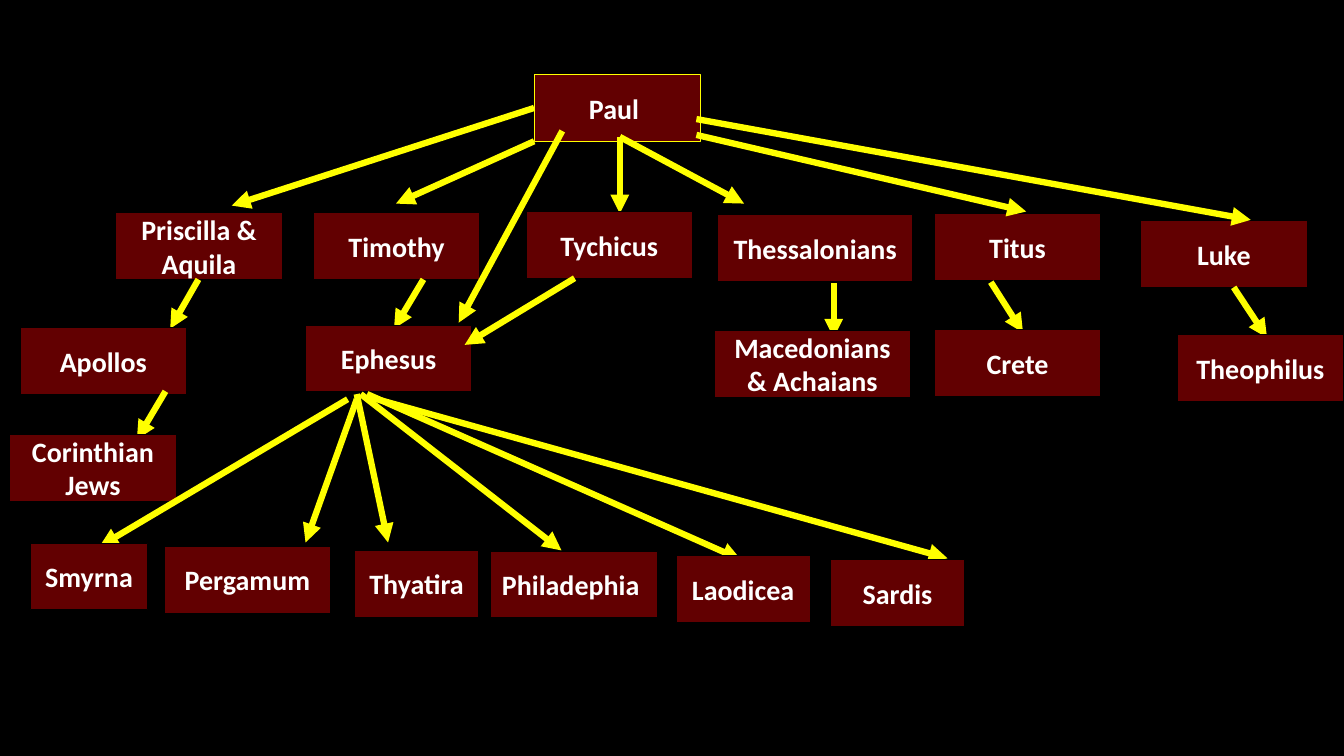
import pptx
import pptx.dml.color
import pptx.enum.shapes
import pptx.enum.text
import pptx.oxml
import pptx.oxml.ns
import pptx.util
from pptx.util import Cm

COLORS = {"background": "000000", "box": "620001", "edge": "000000",
          "arrow": "FFFF00", "text": "FFFFFF"}
BOX_W, BOX_H, WIDE_W = 4.19, 1.68, 4.93


def rgb(name):
    return pptx.dml.color.RGBColor.from_string(COLORS[name])


class Chart:
    """Style and current slide of the discipleship tree."""

    def __init__(self, prs):
        self.font, self.size = "Calibri", pptx.util.Pt(20)
        self.s = prs.slides.add_slide(prs.slide_layouts[6])
        fill = self.s.background.fill
        fill.solid()
        fill.fore_color.rgb = rgb("background")

    def box(self, text, x, y, w=BOX_W, edge="edge"):
        sp = self.s.shapes.add_shape(
            pptx.enum.shapes.MSO_SHAPE.RECTANGLE, Cm(x), Cm(y), Cm(w), Cm(BOX_H))
        sp.shadow.inherit = False
        sp.fill.solid()
        sp.fill.fore_color.rgb = rgb("box")
        sp.line.color.rgb = rgb(edge)
        sp.line.width = pptx.util.Pt(0.75)
        tf = sp.text_frame
        tf.word_wrap = True
        tf.vertical_anchor = pptx.enum.text.MSO_ANCHOR.MIDDLE
        p = tf.paragraphs[0]
        p.text = text
        p.alignment = pptx.enum.text.PP_ALIGN.CENTER
        p.font.name, p.font.size, p.font.bold = self.font, self.size, True
        p.font.color.rgb = rgb("text")

    def arrow(self, x1, y1, x2, y2):
        c = self.s.shapes.add_connector(
            pptx.enum.shapes.MSO_CONNECTOR.STRAIGHT, Cm(x1), Cm(y1), Cm(x2), Cm(y2))
        c.line.color.rgb = rgb("arrow")
        c.line.width = pptx.util.Pt(4.5)
        head = pptx.oxml.parse_xml(
            f'<a:tailEnd {pptx.oxml.ns.nsdecls("a")} type="triangle"/>')
        c.line._get_or_add_ln().append(head)
        c._element.spPr.append(pptx.oxml.parse_xml(
            f'<a:effectLst {pptx.oxml.ns.nsdecls("a")}/>'))

    def boxes(self, rows):
        for row in rows:
            self.box(*row)

    def arrows(self, rows):
        for row in rows:
            self.arrow(*row)


COWORKERS = [
    ("Luke", 28.75, 5.56), ("Titus", 23.55, 5.38), ("Timothy", 7.9, 5.36),
    ("Priscilla & Aquila", 2.92, 5.36), ("Thessalonians", 18.08, 5.41, WIDE_W),
]
FROM_PAUL = [
    (13.46, 2.72, 5.84, 5.18), (13.46, 3.56, 9.98, 5.13),
    (15.62, 3.45, 15.62, 5.38), (15.62, 3.45, 18.75, 5.13),
    (17.55, 3.4, 25.86, 5.33), (17.55, 3.0, 31.52, 5.54),
]
FROM_COWORKERS = [
    (5.0, 7.04, 4.29, 8.28), (10.67, 7.04, 9.93, 8.28),
    (21.01, 7.14, 21.01, 8.51), (24.97, 7.11, 25.78, 8.38),
    (31.09, 7.24, 31.93, 8.51),
]
REACHED = [
    ("Tychicus", 13.26, 5.33), ("Apollos", 0.51, 8.26), ("Ephesus", 7.7, 8.2),
    ("Macedonians & Achaians", 18.01, 8.33, WIDE_W),
    ("Crete", 23.55, 8.31), ("Theophilus", 29.67, 8.43),
]
TO_EPHESUS = [(14.17, 3.3, 11.56, 8.13), (14.48, 7.01, 11.71, 8.69)]
FROM_EPHESUS = [
    (8.76, 10.06, 2.51, 13.77), (8.99, 10.06, 7.7, 13.67),
    (8.99, 9.93, 9.78, 13.67), (9.09, 9.93, 14.15, 13.87),
    (9.25, 9.93, 18.67, 14.1), (9.32, 10.01, 23.88, 14.07),
]
CHURCHES = [
    ("Smyrna", 0.76, 13.69, 2.97), ("Pergamum", 4.14, 13.77),
    ("Thyatira", 8.94, 13.87, 3.12), ("Philadephia ", 12.37, 13.89),
    ("Laodicea", 17.04, 14.0, 3.38), ("Sardis", 20.93, 14.1, 3.38),
]


def main():
    prs = pptx.Presentation()
    prs.slide_width, prs.slide_height = Cm(33.87), Cm(19.05)
    chart = Chart(prs)

    # Paul and his co-workers
    chart.box("Paul ", 13.46, 1.88, edge="arrow")
    chart.boxes(COWORKERS)
    chart.arrows(FROM_PAUL)

    # Those the co-workers reached
    chart.arrows(FROM_COWORKERS)
    chart.boxes(REACHED)
    chart.arrow(4.17, 9.86, 3.45, 11.07)
    chart.box("Corinthian Jews", 0.25, 10.95)

    # Ephesus and the churches of Asia
    chart.arrows(TO_EPHESUS + FROM_EPHESUS)
    chart.boxes(CHURCHES)

    prs.save("out.pptx")


if __name__ == "__main__":
    main()
